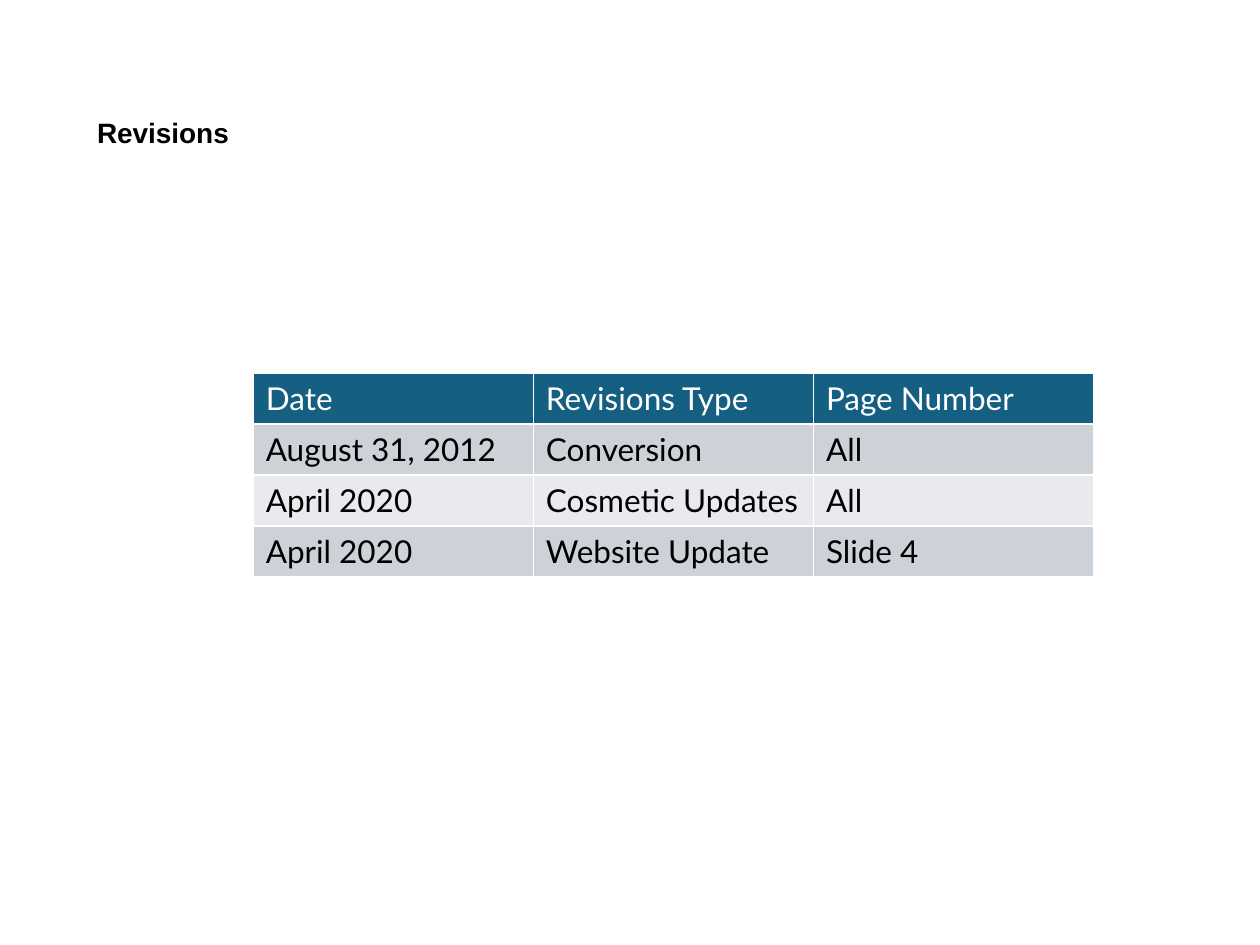
"""Build the revisions slide with its title and revision table."""
from pptx import Presentation
from pptx.dml.color import RGBColor
from pptx.enum import text as t
from pptx.util import Inches, Pt

REVISIONS = [
    ("Date", "Revisions Type", "Page Number"),
    ("August 31, 2012", "Conversion", "All"),
    ("April 2020", "Cosmetic Updates", "All"),
    ("April 2020", "Website Update", "Slide 4"),
]


def color(value):
    return RGBColor.from_string(value)


def write(frame, words, font="Lato", size=18, fill="000000", bold=False, spacing=1.0):
    paragraph = frame.paragraphs[0]
    paragraph.alignment = t.PP_ALIGN.LEFT
    paragraph.line_spacing = spacing
    run = paragraph.add_run()
    run.text = words
    run.font.name = font
    run.font.size = Pt(size)
    run.font.bold = bold
    run.font.color.rgb = color(fill)


class RevisionSlide:
    header_fill = "156082"
    header_text = "FFFFFF"
    band_fills = ("E8EAED", "CCD2D8")

    def __init__(self, presentation):
        self.slide = presentation.slides.add_slide(presentation.slide_layouts[5])

    def title(self, words, left, top, width, height):
        shape = self.slide.shapes.title
        shape.left, shape.top = Inches(left), Inches(top)
        shape.width, shape.height = Inches(width), Inches(height)
        frame = shape.text_frame
        frame.word_wrap = True
        frame.auto_size = t.MSO_AUTO_SIZE.NONE
        frame.vertical_anchor = t.MSO_ANCHOR.MIDDLE
        write(frame, words, font="Arial", size=16, bold=True, spacing=0.9)

    def table(self, rows, left, top, width, height):
        table = self.slide.shapes.add_table(
            len(rows), len(rows[0]),
            Inches(left), Inches(top), Inches(width), Inches(height)).table
        for row, values in enumerate(rows):
            fill = self.band_fills[row % 2] if row else self.header_fill
            for column, value in enumerate(values):
                cell = table.cell(row, column)
                cell.fill.solid()
                cell.fill.fore_color.rgb = color(fill)
                write(cell.text_frame, value,
                      fill="000000" if row else self.header_text)


def main():
    presentation = Presentation()
    presentation.slide_width = Inches(10)
    presentation.slide_height = Inches(7.5)
    page = RevisionSlide(presentation)
    page.title("Revisions", 0.67, 0.67, 1.33, 0.8)
    page.table(REVISIONS, 2.01, 2.96, 6.67, 1.62)
    presentation.save("out.pptx")


if __name__ == "__main__":
    main()
